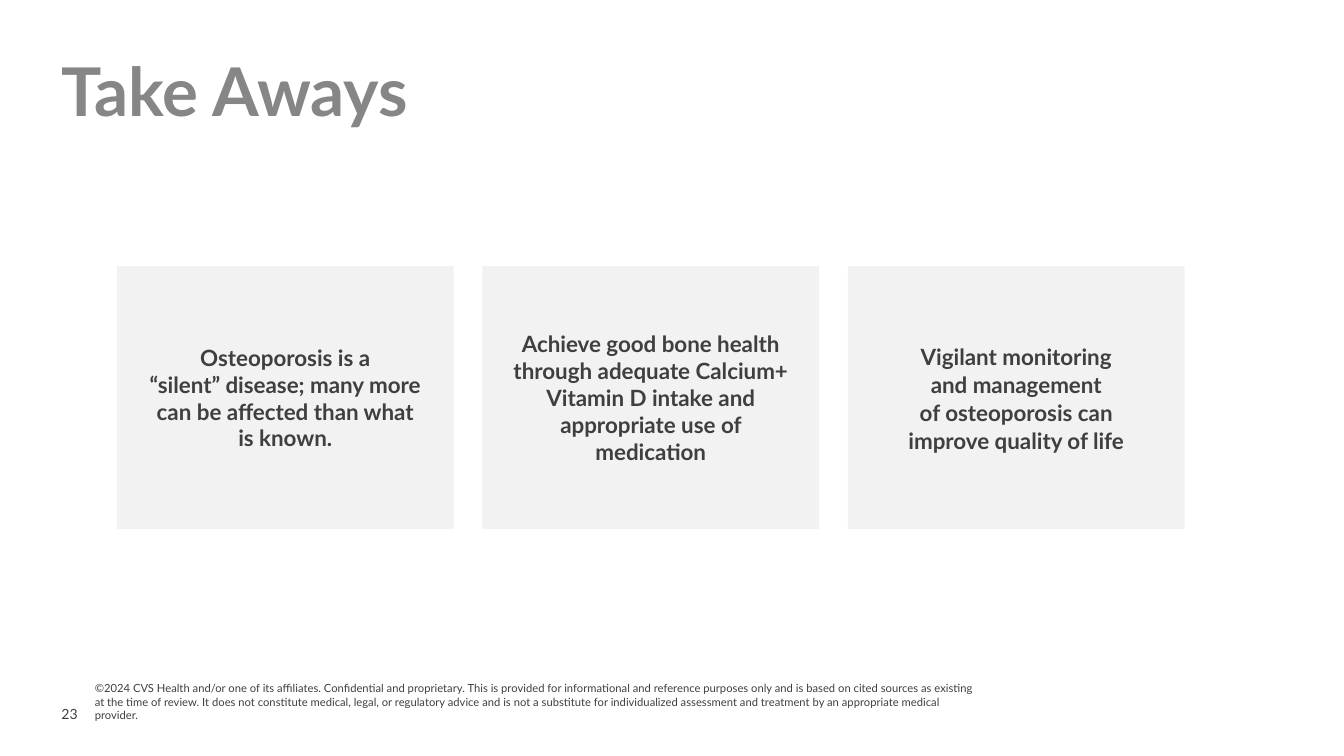
from pptx import Presentation
from pptx.dml.color import RGBColor
from pptx.enum.shapes import MSO_SHAPE as Shape
from pptx.enum.text import MSO_ANCHOR as Anchor, MSO_AUTO_SIZE as AutoSize, PP_ALIGN as Align
from pptx.util import Inches, Pt

FONT = "Lato"
TEXT_COLOR = "3F3F3F"
TITLE_COLOR = "868686"
CARD_COLOR = "F2F2F2"

CARD_LEFT, CARD_TOP = 1.16, 2.64
CARD_WIDTH, CARD_HEIGHT = 3.34, 2.61
CARD_PITCH = 3.625

TAKEAWAYS = [
    ("Osteoporosis is a\v“silent” disease; many more can be affected than what is known.", 1.0),
    ("Achieve good bone health through adequate Calcium+ Vitamin D intake and "
     "appropriate use of medication", 1.0),
    ("Vigilant monitoring\vand management\vof osteoporosis can improve quality of life", 1.05),
]
DISCLAIMER = (
    "©2024 CVS Health and/or one of its affiliates. Confidential and proprietary. "
    "This is provided for informational and reference purposes only and is based on cited "
    "sources as existing at the time of review. It does not constitute medical, legal, or "
    "regulatory advice and is not a substitute for individualized assessment and treatment "
    "by an appropriate medical provider."
)


def rgb(value):
    """Return the colour for a hex string."""
    return RGBColor.from_string(value)


def write_text(shape, text, size, color=TEXT_COLOR, bold=False, align=Align.LEFT,
               anchor=Anchor.TOP, margin=0, spacing=1.0):
    """Fill a shape with one formatted paragraph."""
    frame = shape.text_frame
    frame.word_wrap = True
    frame.auto_size = AutoSize.NONE
    frame.vertical_anchor = anchor
    frame.margin_left = frame.margin_right = Inches(margin)
    frame.margin_top = frame.margin_bottom = Inches(margin)
    paragraph = frame.paragraphs[0]
    paragraph.text = text
    paragraph.alignment = align
    paragraph.line_spacing = spacing
    for run in paragraph.runs:
        run.font.name = FONT
        run.font.size = Pt(size)
        run.font.bold = bold
        run.font.color.rgb = rgb(color)


def set_title(slide, text):
    """Place and format the title placeholder."""
    title = slide.shapes.title
    title.left, title.top = Inches(0.61), Inches(0.58)
    title.width, title.height = Inches(10.57), Inches(0.78)
    write_text(title, text, 48, TITLE_COLOR, bold=True, spacing=0.9)


def add_label(slide, left, top, width, height, text, size, anchor):
    """Add a plain text box."""
    label = slide.shapes.add_textbox(Inches(left), Inches(top), Inches(width), Inches(height))
    write_text(label, text, size, anchor=anchor)


def add_card(slide, left, text, spacing):
    """Add a grey card with centred bold text."""
    card = slide.shapes.add_shape(Shape.RECTANGLE, Inches(left), Inches(CARD_TOP),
                                  Inches(CARD_WIDTH), Inches(CARD_HEIGHT))
    card.shadow.inherit = False
    card.fill.solid()
    card.fill.fore_color.rgb = rgb(CARD_COLOR)
    card.line.fill.background()
    write_text(card, text, 16, bold=True, align=Align.CENTER, anchor=Anchor.MIDDLE,
               margin=0.3, spacing=spacing)


def main():
    """Build the slide and save it."""
    presentation = Presentation()
    presentation.slide_width, presentation.slide_height = Inches(13.33), Inches(7.5)
    slide = presentation.slides.add_slide(presentation.slide_layouts[5])
    set_title(slide, "Take Aways")
    for index, (text, spacing) in enumerate(TAKEAWAYS):
        add_card(slide, CARD_LEFT + index * CARD_PITCH, text, spacing)
    add_label(slide, 0.61, 6.96, 0.33, 0.25, "23", 10, Anchor.MIDDLE)
    add_label(slide, 0.94, 6.76, 8.8, 0.4, DISCLAIMER, 8, Anchor.BOTTOM)
    presentation.save("out.pptx")


if __name__ == "__main__":
    main()
